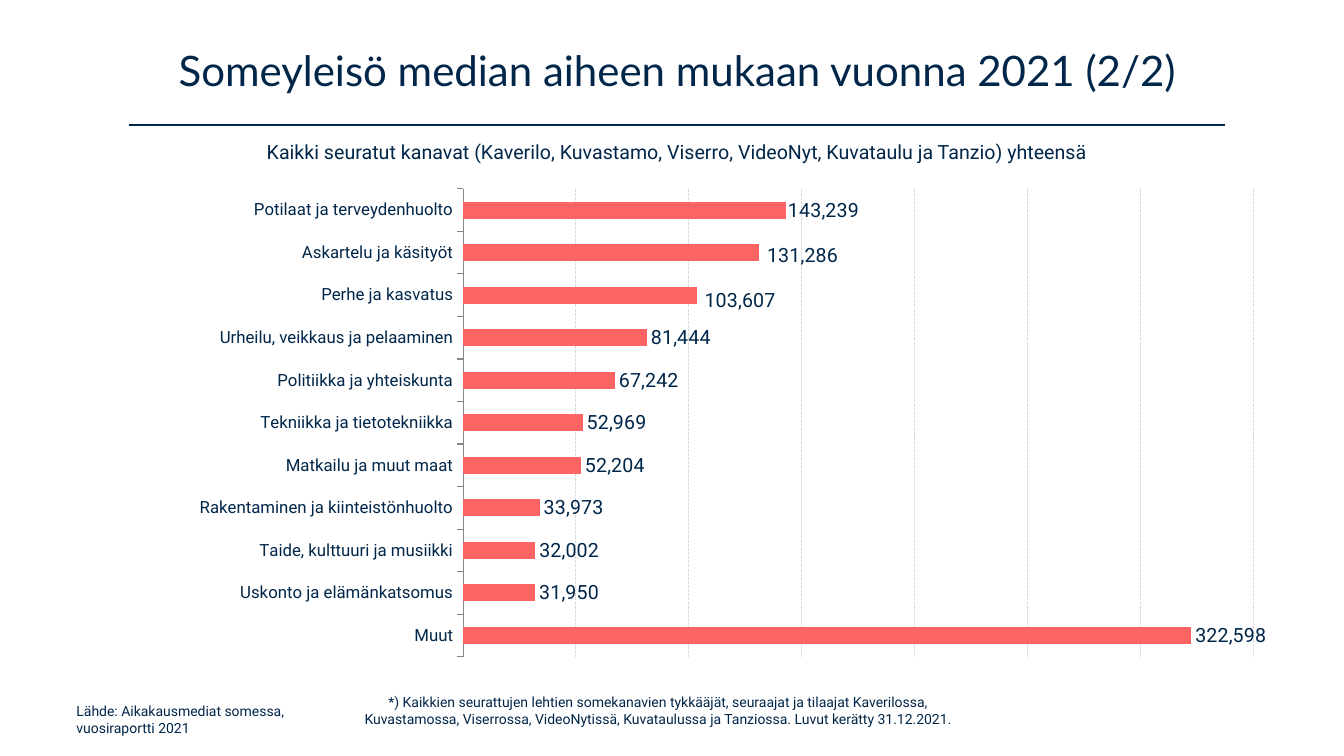
from dataclasses import dataclass

import pptx
import pptx.chart.data
import pptx.dml.color
import pptx.enum.chart
import pptx.enum.dml
import pptx.enum.shapes
import pptx.enum.text
import pptx.oxml
import pptx.oxml.ns
import pptx.util
from lxml import etree
from pptx.util import Inches


def rgb(value):
    return pptx.dml.color.RGBColor.from_string(value)


@dataclass(frozen=True)
class Theme:
    ink: str = "002649"
    bar: str = "FF6464"
    grid: str = "D9D9D9"
    axis: str = "868686"
    heading: str = "Lato"
    body: str = "Roboto"
    title_size: int = 30
    text_size: int = 14
    category_size: int = 12
    note_size: int = 10


THEME = Theme()
ALIGN = pptx.enum.text.PP_ALIGN

AUDIENCE = {
    "Potilaat ja terveydenhuolto": 143239,
    "Askartelu ja käsityöt": 131286,
    "Perhe ja kasvatus": 103607,
    "Urheilu, veikkaus ja pelaaminen": 81444,
    "Politiikka ja yhteiskunta": 67242,
    "Tekniikka ja tietotekniikka": 52969,
    "Matkailu ja muut maat": 52204,
    "Rakentaminen ja kiinteistönhuolto": 33973,
    "Taide, kulttuuri ja musiikki": 32002,
    "Uskonto ja elämänkatsomus": 31950,
    "Muut": 322598,
}
LABEL_SHIFTS = [(-0.002, 0.002), (0.003, 0.007), (0.003, 0.012)]


def style_font(font, size, name=THEME.body):
    font.size = pptx.util.Pt(size)
    font.name = name
    font.color.rgb = rgb(THEME.ink)


def place(shape, left, top, width, height):
    shape.left, shape.top = Inches(left), Inches(top)
    shape.width, shape.height = Inches(width), Inches(height)


def add_title(s, text):
    title = s.shapes.title
    place(title, 0.92, 0.21, 11.6, 1.02)
    tf = title.text_frame
    tf.text = text
    tf.vertical_anchor = pptx.enum.text.MSO_ANCHOR.MIDDLE
    p = tf.paragraphs[0]
    p.alignment = ALIGN.CENTER
    p.line_spacing = 0.9
    style_font(p.runs[0].font, THEME.title_size, THEME.heading)


def add_text(s, text, box, size, align):
    tf = s.shapes.add_textbox(*map(Inches, box)).text_frame
    tf.word_wrap = True
    p = tf.paragraphs[0]
    p.text = text
    p.alignment = align
    for r in p.runs:
        style_font(r.font, size)


def add_rule(s, left, right, y):
    line = s.shapes.add_connector(
        pptx.enum.shapes.MSO_CONNECTOR.STRAIGHT,
        Inches(left), Inches(y), Inches(right), Inches(y))
    line.line.color.rgb = rgb(THEME.ink)
    line.line.width = pptx.util.Pt(1)
    etree.SubElement(line._element.spPr, pptx.oxml.ns.qn("a:effectLst"))


def manual_layout(values, inner=False):
    target = '<c:layoutTarget val="inner"/>' if inner else ""
    modes = '<c:xMode val="edge"/><c:yMode val="edge"/>' if inner else ""
    sizes = "".join(f'<c:{k} val="{v}"/>' for k, v in zip("xywh", values))
    return pptx.oxml.parse_xml(
        f'<c:layout {pptx.oxml.ns.nsdecls("c")}><c:manualLayout>'
        f"{target}{modes}{sizes}</c:manualLayout></c:layout>")


def set_plot_area(chart, values):
    area = chart._chartSpace.chart.plotArea
    for old in area.findall(pptx.oxml.ns.qn("c:layout")):
        area.remove(old)
    area.insert(0, manual_layout(values, inner=True))


def style_axes(chart):
    cat = chart.category_axis
    cat.reverse_order = True
    cat.has_major_gridlines = False
    cat.major_tick_mark = pptx.enum.chart.XL_TICK_MARK.OUTSIDE
    cat.format.line.color.rgb = rgb(THEME.axis)
    style_font(cat.tick_labels.font, THEME.category_size)
    val = chart.value_axis
    val.visible = False
    val.minimum_scale, val.maximum_scale, val.major_unit = 0, 350000, 50000
    val.has_major_gridlines = True
    grid = val.major_gridlines.format.line
    grid.color.rgb = rgb(THEME.grid)
    grid.width = pptx.util.Pt(0.75)
    grid.dash_style = pptx.enum.dml.MSO_LINE.SQUARE_DOT


def label_bars(series):
    outside = pptx.enum.chart.XL_LABEL_POSITION.OUTSIDE_END
    labels = series.data_labels
    labels.show_value = True
    labels.number_format = "#,##0"
    labels.number_format_is_linked = False
    labels.position = outside
    style_font(labels.font, THEME.text_size)
    for i, shift in enumerate(LABEL_SHIFTS):
        label = series.points[i].data_label
        label.position = outside
        style_font(label.font, THEME.text_size)
    for d, shift in zip(series._element.iter(pptx.oxml.ns.qn("c:dLbl")), LABEL_SHIFTS):
        d.insert(1, manual_layout(shift))


def add_bar_chart(s, data, box):
    cd = pptx.chart.data.CategoryChartData(number_format="#,##0")
    cd.categories = list(data)
    cd.add_series("Series 1", list(data.values()))
    chart = s.shapes.add_chart(
        pptx.enum.chart.XL_CHART_TYPE.BAR_CLUSTERED,
        *map(Inches, box), cd).chart
    chart.has_legend = False
    chart.has_title = False
    style_font(chart.font, THEME.text_size)
    plot = chart.plots[0]
    plot.gap_width = 150
    plot.vary_by_categories = False
    series = plot.series[0]
    series.format.fill.solid()
    series.format.fill.fore_color.rgb = rgb(THEME.bar)
    set_plot_area(chart, (0.341, 0.033, 0.645, 0.934))
    style_axes(chart)
    label_bars(series)


def main():
    prs = pptx.Presentation()
    prs.slide_width, prs.slide_height = Inches(13.33), Inches(7.5)
    s = prs.slides.add_slide(prs.slide_layouts[5])
    add_title(s, "Someyleisö median aiheen mukaan vuonna 2021 (2/2)")
    add_rule(s, 1.28, 12.15, 1.24)
    add_text(s, "Kaikki seuratut kanavat (Kaverilo, Kuvastamo, Viserro, VideoNyt, "
             "Kuvataulu ja Tanzio) yhteensä",
             (1.28, 1.34, 10.87, 0.34), THEME.text_size, ALIGN.CENTER)
    add_bar_chart(s, AUDIENCE, (0.45, 1.71, 12.15, 4.97))
    add_text(s, "Lähde: Aikakausmediat somessa,\nvuosiraportti 2021",
             (0.66, 6.92, 6.58, 0.44), THEME.note_size, ALIGN.LEFT)
    add_text(s, "*) Kaikkien seurattujen lehtien somekanavien tykkääjät, seuraajat "
             "ja tilaajat Kaverilossa, Kuvastamossa, Viserrossa, VideoNytissä, "
             "Kuvataulussa ja Tanziossa. Luvut kerätty 31.12.2021.",
             (3.36, 6.83, 6.33, 0.44), THEME.note_size, ALIGN.CENTER)
    prs.save("out.pptx")


if __name__ == "__main__":
    main()
